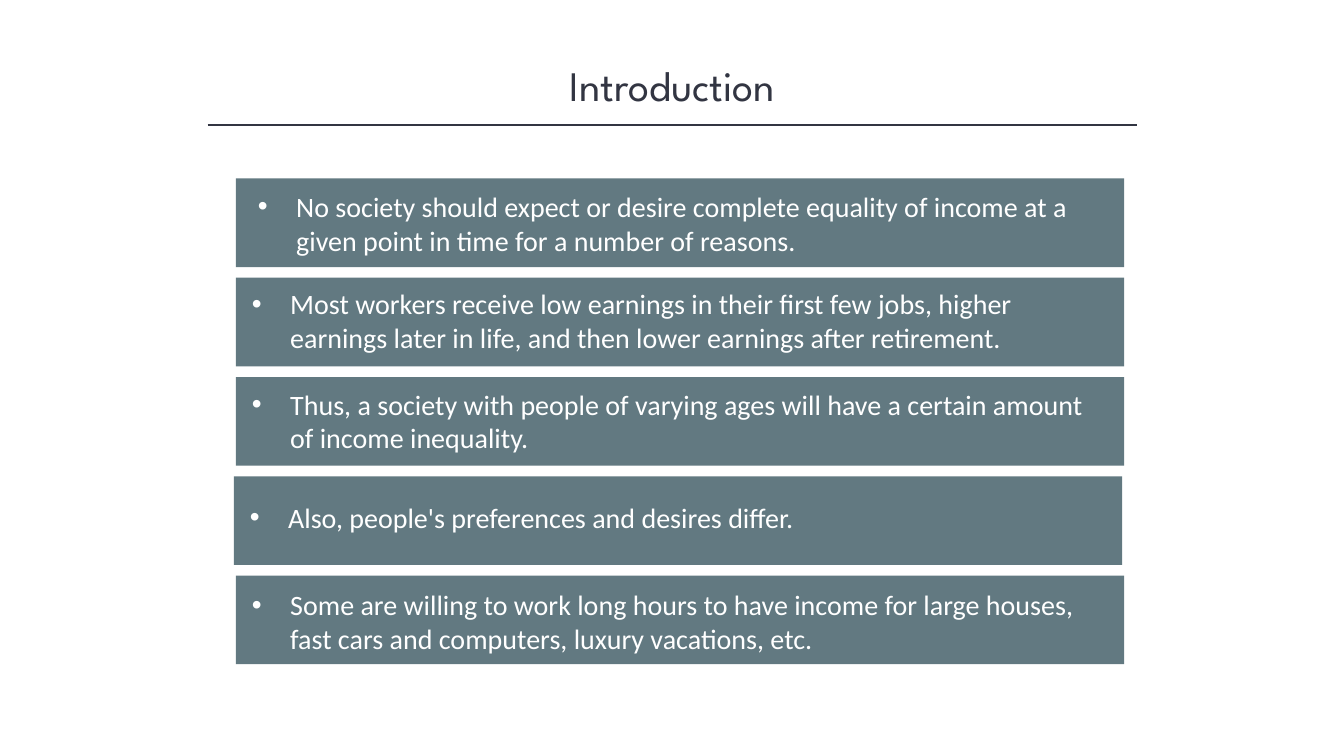
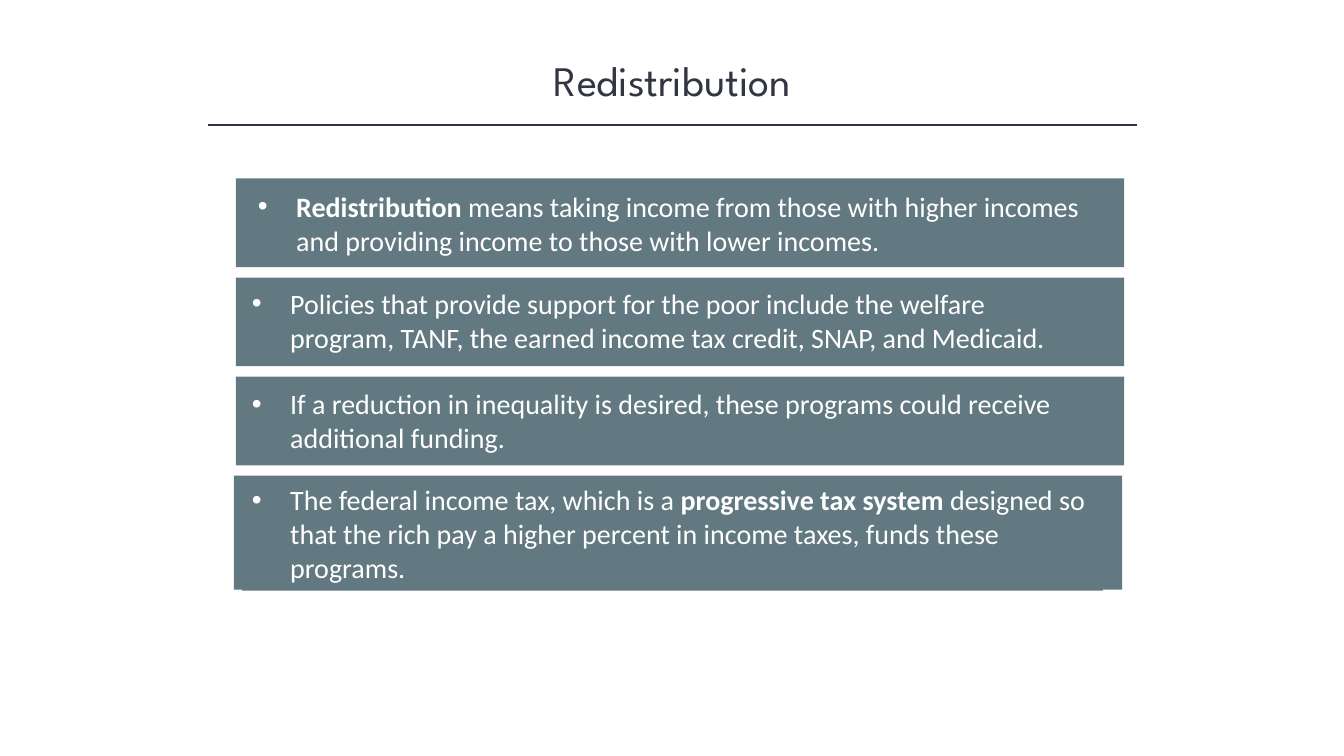
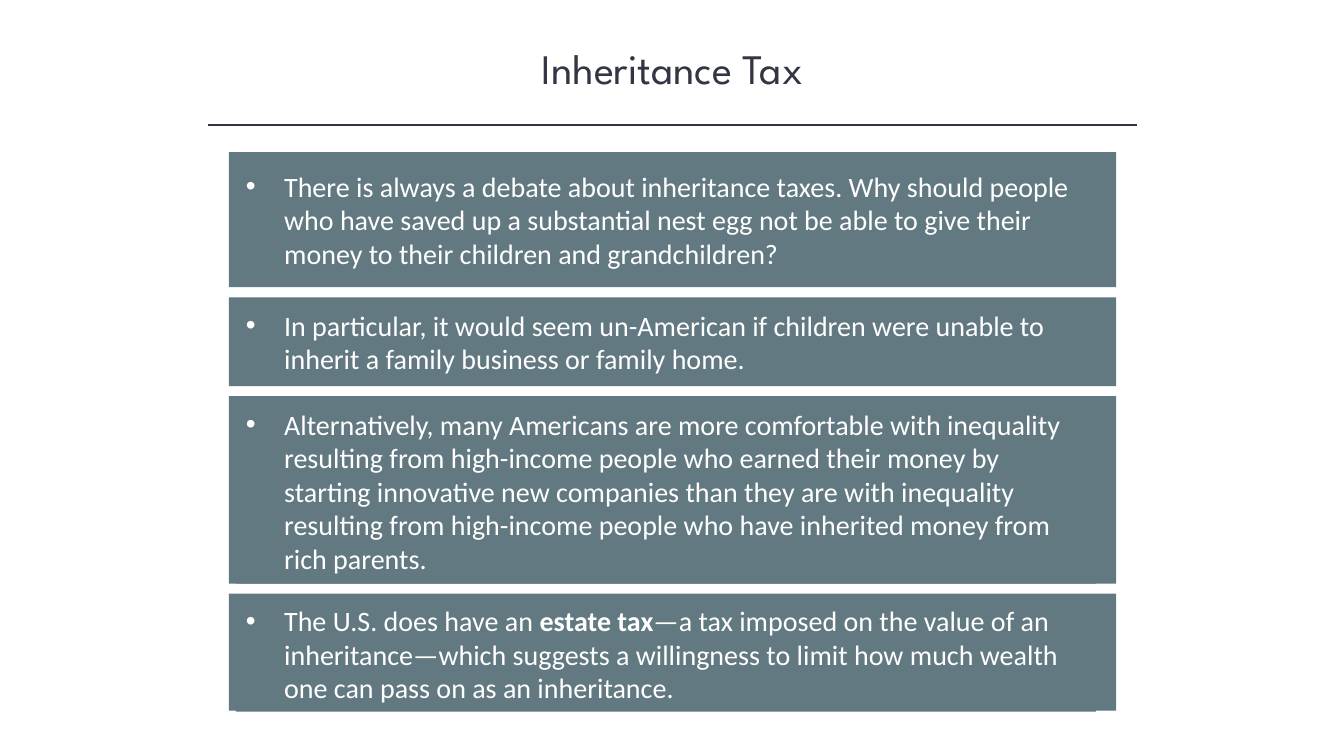
from dataclasses import dataclass

from lxml import etree
from pptx import Presentation
from pptx import util as u
from pptx.dml.color import RGBColor
from pptx.enum import shapes, text
from pptx.oxml import ns


@dataclass(frozen=True)
class Theme:
    ink: RGBColor = RGBColor.from_string("323542")
    slate: RGBColor = RGBColor.from_string("627981")
    white: RGBColor = RGBColor.from_string("FFFFFF")
    head: str = "League Spartan"
    body: str = "Calibri"
    big: int = 30
    base: int = 20
    hang: float = 0.38  # bullet indent, inches
    line: float = 0.34  # height of one line of body text


T = Theme()


def put(obj, **vals):
    """Set several attributes of one object."""
    for key, val in vals.items():
        setattr(obj, key, val)


def inch(*vals):
    return [u.Inches(v) for v in vals]


def add_head(slide, name, top):
    """Centred title over a thin rule."""
    title = slide.shapes.title
    left, top, width, height = inch(1.67, top, 10, 0.61)
    put(title, left=left, top=top, width=width, height=height)
    frame = title.text_frame
    put(frame, text=name, word_wrap=True,
        vertical_anchor=text.MSO_ANCHOR.TOP,
        auto_size=text.MSO_AUTO_SIZE.SHAPE_TO_FIT_TEXT)
    para = frame.paragraphs[0]
    para.alignment = text.PP_ALIGN.CENTER
    put(para.runs[0].font, name=T.head, size=u.Pt(T.big))
    para.runs[0].font.color.rgb = T.ink

    rule = slide.shapes.add_connector(
        shapes.MSO_CONNECTOR.STRAIGHT, *inch(2.06, 1.24, 11.28, 1.24))
    rule.line.color.rgb = T.ink
    rule.line.width = u.Pt(1)
    etree.SubElement(rule._element.spPr, ns.qn("a:effectLst"))


def add_bullet(para, words):
    """One bulleted paragraph; words between asterisks are bold."""
    props = para._p.get_or_add_pPr()
    hang = u.Inches(T.hang)
    props.set("marL", str(hang))
    props.set("indent", str(-hang))
    font = etree.SubElement(props, ns.qn("a:buFont"))
    font.set("typeface", "Arial")
    etree.SubElement(props, ns.qn("a:buChar")).set("char", "•")
    for num, part in enumerate(words.split("*")):
        if part:
            run = para.add_run()
            run.text = part
            put(run.font, name=T.body, size=u.Pt(T.base), bold=num % 2 == 1)
            run.font.color.rgb = T.white


def add_bar(slide, box, pad, drop, lines, words):
    """Filled bar with its text label, kept as one group."""
    left, top, width, height = box
    group = slide.shapes.add_group_shape()
    bar = group.shapes.add_shape(
        shapes.MSO_SHAPE.RECTANGLE, *inch(left, top, width, height))
    bar.shadow.inherit = False
    bar.line.fill.background()
    label = group.shapes.add_textbox(*inch(
        left + pad, top + drop, width - 0.27, 0.1 + T.line * lines))
    for part in (bar, label):
        part.fill.solid()
        part.fill.fore_color.rgb = T.slate
    put(label.text_frame, word_wrap=True,
        auto_size=text.MSO_AUTO_SIZE.SHAPE_TO_FIT_TEXT)
    add_bullet(label.text_frame.paragraphs[0], words)


def add_stack(slide, box, rows):
    """Bars spread over the box with equal gaps."""
    left, top, width, height = box
    gap = (height - sum(row[0] for row in rows)) / (len(rows) - 1)
    for tall, lines, shift, pad, drop, words in rows:
        add_bar(slide, (left + shift, top, width, tall),
                pad, drop, lines, words)
        top += tall + gap


# Title, title top, stack box, then rows of:
# bar height, text lines, bar shift, label pad, label drop, words
SLIDES = [
    ("Introduction", 0.54, (2.34, 1.77, 8.81, 4.82), [
        (0.88, 2, 0, 0.12, 0.06,
         "No society should expect or desire complete equality of income "
         "at a given point in time for a number of reasons."),
        (0.88, 2, 0, 0.06, 0.04,
         "Most workers receive low earnings in their first few jobs, higher "
         "earnings later in life, and then lower earnings after retirement."),
        (0.88, 2, 0, 0.06, 0.05,
         "Thus, a society with people of varying ages will have a certain "
         "amount of income inequality."),
        (0.88, 1, -0.02, 0.06, 0.19,
         "Also, people's preferences and desires differ."),
        (0.88, 2, 0, 0.06, 0.07,
         "Some are willing to work long hours to have income for large "
         "houses, fast cars and computers, luxury vacations, etc."),
    ]),
    ("Redistribution", 0.49, (2.34, 1.77, 8.81, 4.08), [
        (0.88, 2, 0, 0.12, 0.06,
         "*Redistribution* means taking income from those with higher "
         "incomes and providing income to those with lower incomes."),
        (0.88, 2, 0, 0.06, 0.04,
         "Policies that provide support for the poor include the welfare "
         "program, TANF, the earned income tax credit, SNAP, and Medicaid."),
        (0.88, 2, 0, 0.06, 0.05,
         "If a reduction in inequality is desired, these programs could "
         "receive additional funding."),
        (1.13, 3, -0.02, 0.08, 0.02,
         "The federal income tax, which is a *progressive tax system "
         "*designed so that the rich pay a higher percent in income taxes, "
         "funds these programs."),
    ]),
    ("Inheritance Tax", 0.37, (2.27, 1.51, 8.8, 5.54), [
        (1.34, 3, 0, 0.07, 0.12,
         "There is always a debate about inheritance taxes. Why should "
         "people who have saved up a substantial nest egg not be able to "
         "give their money to their children and grandchildren?"),
        (0.88, 2, 0, 0.07, 0.06,
         "In particular, it would seem un-American if children were unable "
         "to inherit a family business or family home."),
        (1.86, 5, 0, 0.07, 0.06,
         "Alternatively, many Americans are more comfortable with "
         "inequality resulting from high-income people who earned their "
         "money by starting innovative new companies than they are with "
         "inequality resulting from high-income people who have inherited "
         "money from rich parents."),
        (1.16, 3, 0, 0.07, 0.05,
         "The U.S. does have an *estate tax*—a tax imposed on the value of "
         "an inheritance—which suggests a willingness to limit how much "
         "wealth one can pass on as an inheritance."),
    ]),
]


def main():
    deck = Presentation()
    put(deck, slide_width=u.Inches(13.33), slide_height=u.Inches(7.5))
    for name, top, box, rows in SLIDES:
        slide = deck.slides.add_slide(deck.slide_layouts[5])
        add_head(slide, name, top)
        add_stack(slide, box, rows)
    deck.save("out.pptx")


if __name__ == "__main__":
    main()
